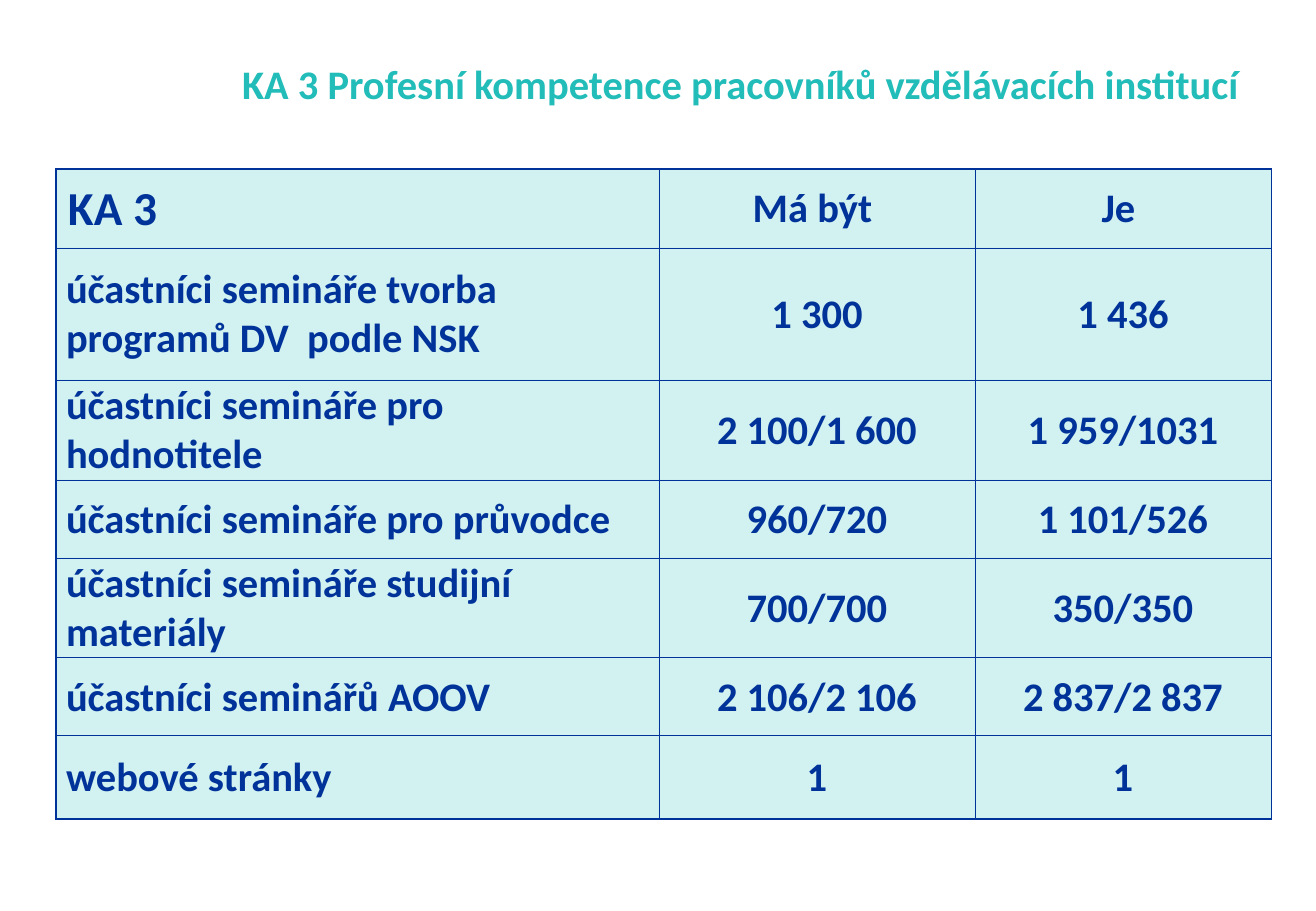
from dataclasses import dataclass

from lxml.etree import SubElement
from pptx import Presentation
from pptx.dml.color import RGBColor
from pptx.enum.text import MSO_ANCHOR as Anchor, PP_ALIGN as Align
from pptx.oxml import parse_xml
from pptx.oxml.ns import nsdecls, qn
from pptx.util import Pt

# Content
TITLE = "KA 3 Profesní kompetence pracovníků vzdělávacích institucí"
INDICATORS = [
    ("KA 3", "Má být", "Je"),
    ("účastníci semináře tvorba\nprogramů DV  podle NSK", "1 300", "1 436"),
    ("účastníci semináře pro\nhodnotitele", "2 100/1 600", "1 959/1031"),
    ("účastníci semináře pro průvodce", "960/720", "1 101/526"),
    ("účastníci semináře studijní\nmateriály", "700/700", "350/350"),
    ("účastníci seminářů AOOV", "2 106/2 106", "2 837/2 837"),
    ("webové stránky", "1", "1"),
]

# Layout in px
SLIDE_SIZE = (1316, 911)
TITLE_BOX = (66, 36, 1185, 94)
TABLE_ORIGIN = (56, 169)
COLUMN_WIDTHS = (603, 316, 296)
ROW_HEIGHTS = (79, 132, 100, 78, 100, 78, 83)
CELL_INSET, LABEL_INSET, HEADING_INSET = 1, 10, 12


@dataclass(frozen=True)
class Theme:
    font: str = "Calibri"
    accent: str = "22BCB9"
    ink: str = "003399"
    tint_alpha: int = 20000
    body_size: int = 24
    corner_size: int = 28
    outer_line: float = 1
    inner_line: float = 0.5


THEME = Theme()


def px(length):
    return round(length * 914400 / 121.5)


def style(paragraph, size, color, align):
    paragraph.alignment = align
    font = paragraph.font
    font.name, font.size, font.bold = THEME.font, Pt(size), True
    font.color.rgb = RGBColor.from_string(color)


def tint(cell):
    cell.fill.solid()
    cell.fill.fore_color.rgb = RGBColor.from_string(THEME.accent)
    color = cell.fill._xPr.find(".//" + qn("a:srgbClr"))
    SubElement(color, qn("a:alpha"), val=str(THEME.tint_alpha))


def draw_borders(cell, outer_edges):
    properties = cell._tc.get_or_add_tcPr()
    for position, edge in enumerate("LRTB"):
        width = THEME.outer_line if edge in outer_edges else THEME.inner_line
        properties.insert(position, parse_xml(
            f'<a:ln{edge} {nsdecls("a")} w="{Pt(width)}"><a:solidFill>'
            f'<a:srgbClr val="{THEME.ink}"/></a:solidFill></a:ln{edge}>'))


prs = Presentation()
prs.slide_width, prs.slide_height = map(px, SLIDE_SIZE)
slide = prs.slides.add_slide(prs.slide_layouts[5])

# Title
title = slide.shapes.title
title.left, title.top, title.width, title.height = map(px, TITLE_BOX)
title.text_frame.text = TITLE
title.text_frame.vertical_anchor = Anchor.MIDDLE
style(title.text_frame.paragraphs[0], THEME.body_size, THEME.accent, Align.RIGHT)

# Indicator table
table = slide.shapes.add_table(
    len(INDICATORS), len(COLUMN_WIDTHS), *map(px, TABLE_ORIGIN),
    px(sum(COLUMN_WIDTHS)), px(sum(ROW_HEIGHTS))).table
table.first_row = table.horz_banding = False
for column, width in zip(table.columns, COLUMN_WIDTHS):
    column.width = px(width)
for row, height in zip(table.rows, ROW_HEIGHTS):
    row.height = px(height)

last_row = len(INDICATORS) - 1
for r, indicator in enumerate(INDICATORS):
    for c, content in enumerate(indicator):
        is_heading, is_label = r == 0, c == 0
        cell = table.cell(r, c)
        cell.text = content
        cell.vertical_anchor = Anchor.MIDDLE
        cell.margin_left = cell.margin_right = cell.margin_top = px(CELL_INSET)
        cell.margin_bottom = 0
        if is_label:
            cell.margin_left = px(HEADING_INSET if is_heading else LABEL_INSET)
        elif is_heading:
            cell.margin_right = px(LABEL_INSET)

        size = THEME.corner_size if is_heading and is_label else THEME.body_size
        for paragraph in cell.text_frame.paragraphs:
            style(paragraph, size, THEME.ink, Align.LEFT if is_label else Align.CENTER)

        tint(cell)
        draw_borders(cell, "L" * is_label + "T" * is_heading + "B" * (r == last_row))

prs.save("out.pptx")
